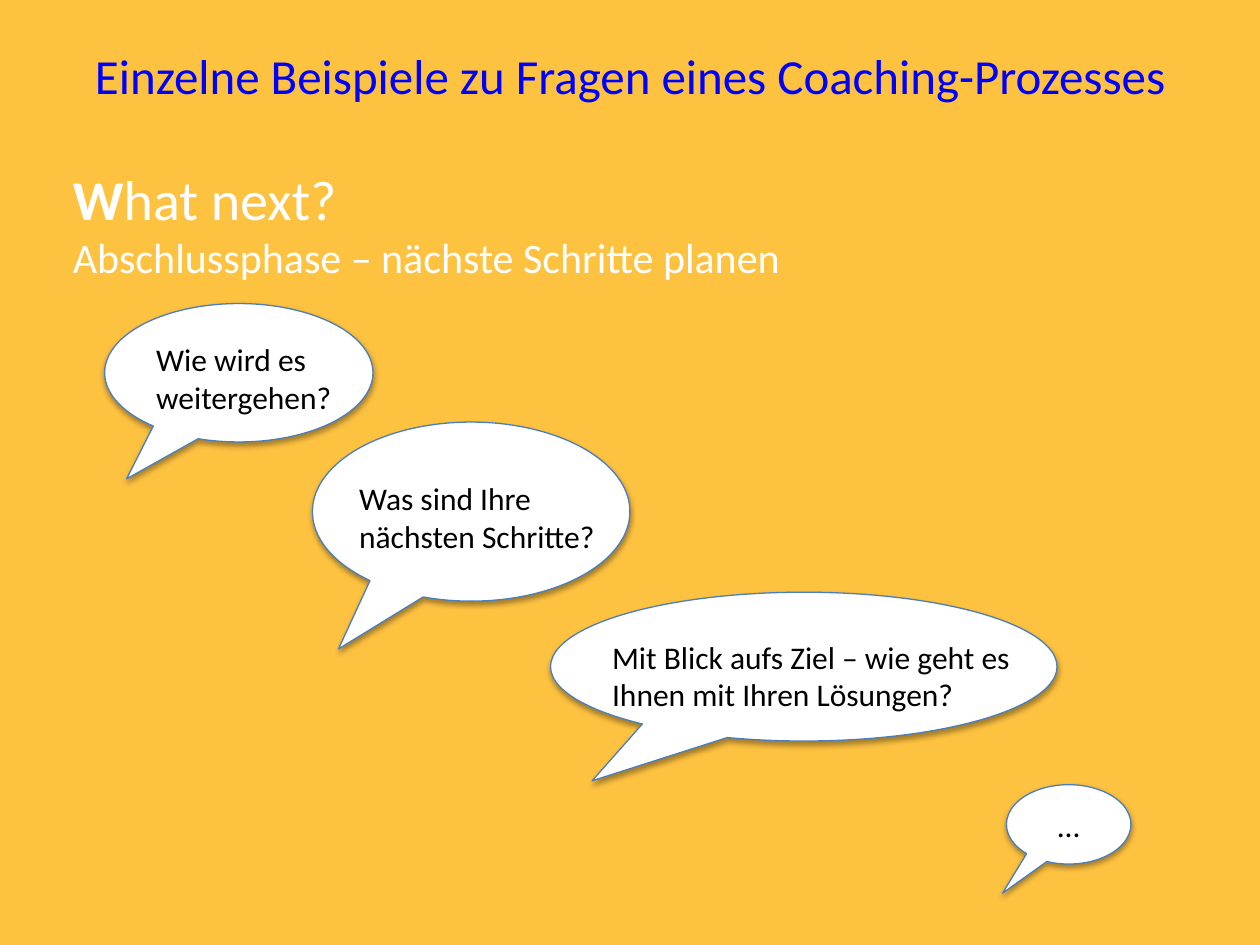
from dataclasses import dataclass
from typing import Optional

import pptx
import pptx.dml.color
import pptx.enum.shapes
import pptx.enum.text
import pptx.util

Cm = pptx.util.Cm
ALIGN = pptx.enum.text.PP_ALIGN
ANCHOR = pptx.enum.text.MSO_ANCHOR
AUTO_SIZE = pptx.enum.text.MSO_AUTO_SIZE

FONT = "Calibri"
COLORS = {
    "background": "FEC241",
    "title": "0000FF",
    "heading": "FFFFFF",
    "bubble": "FFFFFF",
    "outline": "4B7EBC",
    "question": "000000",
}


@dataclass
class Box:
    """A rectangle in centimetres."""
    left: float
    top: float
    width: float
    height: float

    def lengths(self) -> tuple:
        return Cm(self.left), Cm(self.top), Cm(self.width), Cm(self.height)


@dataclass
class Bubble:
    box: Box
    lines: list
    tail: tuple = (-0.418, 0.767)
    text_box: Optional[Box] = None  # None puts the text inside the bubble


def rgb(name: str) -> pptx.dml.color.RGBColor:
    return pptx.dml.color.RGBColor.from_string(COLORS[name])


def add_run(paragraph, text: str, *, size: int = 18, color: str = "question",
            bold: Optional[bool] = None) -> None:
    run = paragraph.add_run()
    run.text = text
    run.font.name = FONT
    run.font.size = pptx.util.Pt(size)
    run.font.bold = bold
    run.font.color.rgb = rgb(color)


def write_lines(frame, lines: list, *, align=ALIGN.LEFT, **text_format) -> None:
    for index, line in enumerate(lines):
        paragraph = frame.add_paragraph() if index else frame.paragraphs[0]
        paragraph.alignment = align
        add_run(paragraph, line, **text_format)


def add_text_box(slide, box: Box, wrap: bool):
    frame = slide.shapes.add_textbox(*box.lengths()).text_frame
    frame.word_wrap = wrap
    frame.auto_size = AUTO_SIZE.SHAPE_TO_FIT_TEXT
    return frame


def add_bubble(slide, bubble: Bubble) -> None:
    # The soft shadow comes from the theme's effect style
    shape = slide.shapes.add_shape(
        pptx.enum.shapes.MSO_SHAPE.OVAL_CALLOUT, *bubble.box.lengths())
    shape.adjustments[0], shape.adjustments[1] = bubble.tail
    shape.fill.solid()
    shape.fill.fore_color.rgb = rgb("bubble")
    shape.line.color.rgb = rgb("outline")
    shape.line.width = pptx.util.Pt(0.75)
    if bubble.text_box:
        frame = add_text_box(slide, bubble.text_box, wrap=False)
        write_lines(frame, bubble.lines)
    else:
        shape.text_frame.vertical_anchor = ANCHOR.MIDDLE
        write_lines(shape.text_frame, bubble.lines, align=ALIGN.CENTER)


BUBBLES = [
    Bubble(Box(2.11, 6.12, 5.41, 2.79), ["Wie wird es", "weitergehen?"],
           text_box=Box(2.9, 6.73, 4.09, 1.8)),
    Bubble(Box(6.3, 8.51, 6.4, 3.61), ["Was sind Ihre", "nächsten Schritte?"],
           text_box=Box(6.99, 9.53, 5.33, 1.8)),
    Bubble(Box(11.1, 11.94, 10.21, 3),
           ["Mit Blick aufs Ziel – wie geht es", "Ihnen mit Ihren Lösungen?"],
           text_box=Box(12.09, 12.73, 8.76, 1.8)),
    Bubble(Box(20.29, 15.82, 2.51, 1.6), ["..."], tail=(-0.532, 0.867)),
]


def main() -> None:
    presentation = pptx.Presentation()
    presentation.slide_width, presentation.slide_height = Cm(25.4), Cm(19.05)
    slide = presentation.slides.add_slide(presentation.slide_layouts[5])
    slide.background.fill.solid()
    slide.background.fill.fore_color.rgb = rgb("background")

    # Title
    title = slide.shapes.title
    title.left, title.top, title.width, title.height = Box(
        1.27, 0.76, 22.86, 1.5).lengths()
    title.text_frame.auto_size = AUTO_SIZE.NONE
    title.text_frame.vertical_anchor = ANCHOR.MIDDLE
    write_lines(title.text_frame,
                ["Einzelne Beispiele zu Fragen eines Coaching-Prozesses"],
                align=ALIGN.CENTER, size=28, color="title")

    # Phase heading
    heading = add_text_box(slide, Box(1.22, 3.19, 23.16, 2.65), wrap=True)
    add_run(heading.paragraphs[0], "W", size=32, color="heading", bold=True)
    add_run(heading.paragraphs[0], "hat next?", size=32, color="heading")
    add_run(heading.add_paragraph(), "Abschlussphase – nächste Schritte planen",
            size=24, color="heading")

    # Speech bubbles
    for bubble in BUBBLES:
        add_bubble(slide, bubble)

    presentation.save("out.pptx")


if __name__ == "__main__":
    main()
